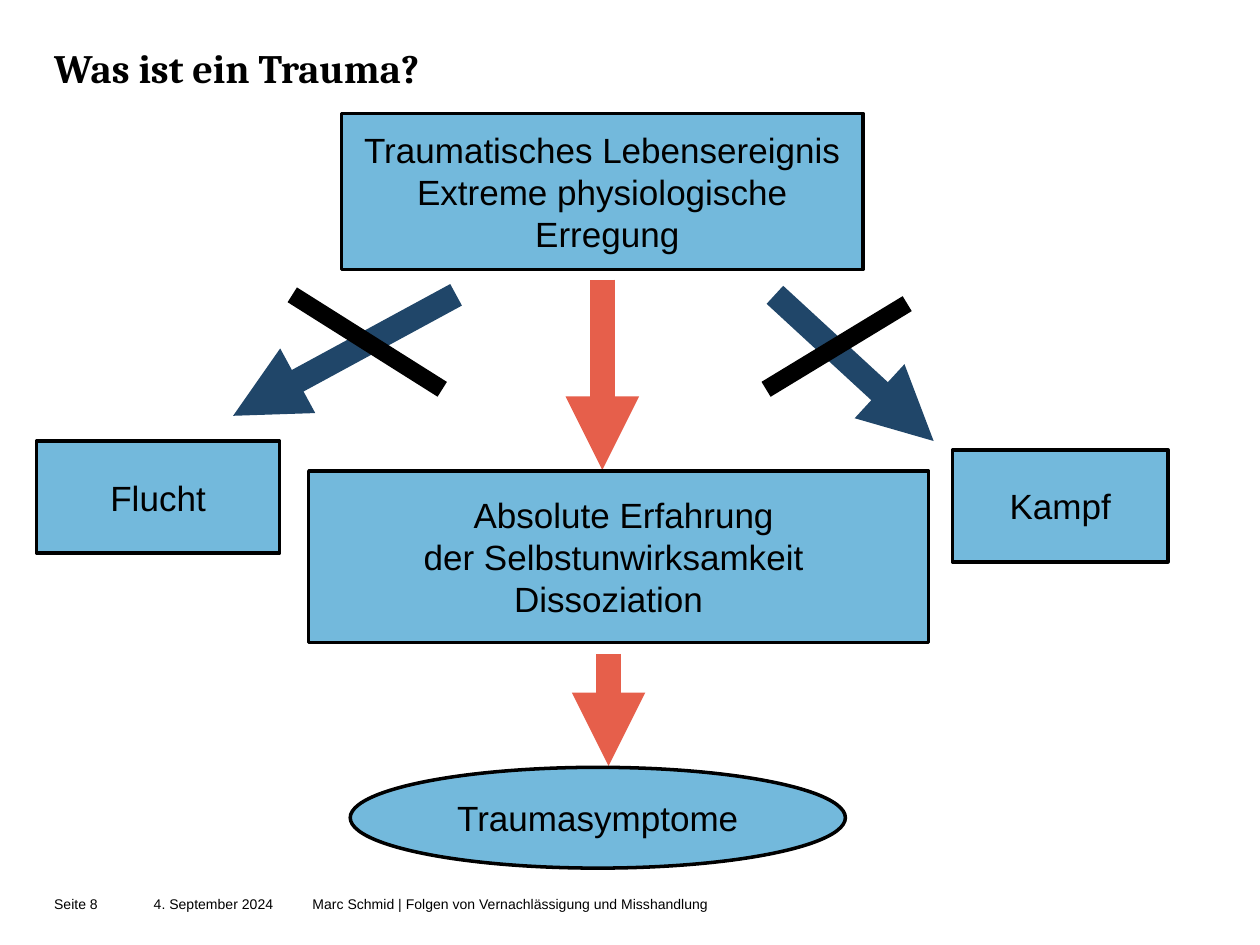
from lxml import etree
from pptx import Presentation
from pptx import util as u
from pptx.dml.color import RGBColor
from pptx.enum import shapes, text
from pptx.oxml.ns import qn

COLORS = {
    "black": "000000",
    "box": "73B9DC",
    "consequence": "E65F4B",
    "reaction": "204669",
}
RECT = shapes.MSO_SHAPE.RECTANGLE
OVAL = shapes.MSO_SHAPE.OVAL
SPACE_WIDTH = 0.08


def color(name):
    return RGBColor.from_string(COLORS[name])


def add_run(paragraph, wording, size, font="Arial", bold=False):
    run = paragraph.add_run()
    run.text = wording
    run.font.size = u.Pt(size)
    run.font.name = font
    run.font.bold = bold
    run.font.color.rgb = color("black")


def add_label(slide, place, wording, size, anchor, **style):
    label = slide.shapes.add_textbox(*map(u.Inches, place))
    frame = label.text_frame
    frame.word_wrap = True
    frame.vertical_anchor = anchor
    frame.margin_left = frame.margin_right = 0
    frame.margin_top = frame.margin_bottom = 0
    add_run(frame.paragraphs[0], wording, size, **style)


def add_box(slide, kind, place, lines):
    box = slide.shapes.add_shape(kind, *map(u.Inches, place))
    box.shadow.inherit = False
    box.fill.solid()
    box.fill.fore_color.rgb = color("box")
    box.line.color.rgb = color("black")
    box.line.width = u.Pt(2)
    frame = box.text_frame
    frame.word_wrap = False
    frame.vertical_anchor = text.MSO_ANCHOR.MIDDLE
    for index, (wording, shift) in enumerate(lines):
        paragraph = frame.add_paragraph() if index else frame.paragraphs[0]
        paragraph.alignment = text.PP_ALIGN.CENTER
        if shift:
            side = "marL" if shift > 0 else "marR"
            indent = u.Inches(abs(shift) * SPACE_WIDTH)
            paragraph._p.get_or_add_pPr().set(side, str(indent))
        add_run(paragraph, wording, 20)


def add_line(slide, start, end, color_name, width, arrow=False):
    line = slide.shapes.add_connector(
        shapes.MSO_CONNECTOR.STRAIGHT, *map(u.Inches, start + end))
    line.line.color.rgb = color(color_name)
    line.line.width = u.Pt(width)
    properties = line._element.spPr
    if arrow:
        outline = properties.find(qn("a:ln"))
        etree.SubElement(outline, qn("a:tailEnd"), type="triangle")
    etree.SubElement(properties, qn("a:effectLst"))


def add_arrow(slide, start, end, color_name):
    add_line(slide, start, end, color_name, 14, arrow=True)


def add_strike(slide, start, end):
    add_line(slide, start, end, "black", 10)


def add_footer(slide):
    for left, width, wording in (
        (2.48, 3.39, "Marc Schmid | Folgen von Vernachlässigung und Misshandlung"),
        (1.22, 1.18, "4. September 2024"),
        (0.43, 0.63, "Seite 8"),
    ):
        add_label(slide, (left, 7.02, width, 0.31), wording, 8,
                  text.MSO_ANCHOR.MIDDLE)


def main():
    deck = Presentation()
    deck.slide_width = u.Inches(10)
    deck.slide_height = u.Inches(7.5)
    slide = deck.slides.add_slide(deck.slide_layouts[6])

    add_label(slide, (0.43, 0.34, 9.14, 0.98), "Was ist ein Trauma?", 23,
              text.MSO_ANCHOR.TOP, font="Cambria", bold=True)

    add_arrow(slide, (4.78, 2.22), (4.78, 3.73), "consequence")
    add_box(slide, RECT, (2.71, 0.9, 4.14, 1.24), [
        ("Traumatisches Lebensereignis", 0),
        ("Extreme physiologische", 0),
        ("Erregung", 1),
    ])
    add_box(slide, RECT, (0.29, 3.5, 1.93, 0.89), [("Flucht", 0)])
    add_box(slide, RECT, (2.45, 3.74, 4.92, 1.36), [
        ("Absolute Erfahrung", 1),
        ("der Selbstunwirksamkeit", -1),
        ("Dissoziation", -2),
    ])
    add_arrow(slide, (3.62, 2.34), (1.85, 3.3), "reaction")
    add_strike(slide, (2.32, 2.34), (3.51, 3.09))
    add_arrow(slide, (4.83, 5.19), (4.83, 6.08), "consequence")
    add_box(slide, OVAL, (2.78, 6.09, 3.93, 0.8), [("Traumasymptome", 0)])
    add_box(slide, RECT, (7.56, 3.57, 1.71, 0.89), [("Kampf", 0)])
    add_arrow(slide, (6.15, 2.34), (7.41, 3.5), "reaction")
    add_strike(slide, (6.08, 3.09), (7.2, 2.41))

    add_footer(slide)
    deck.save("out.pptx")


if __name__ == "__main__":
    main()
